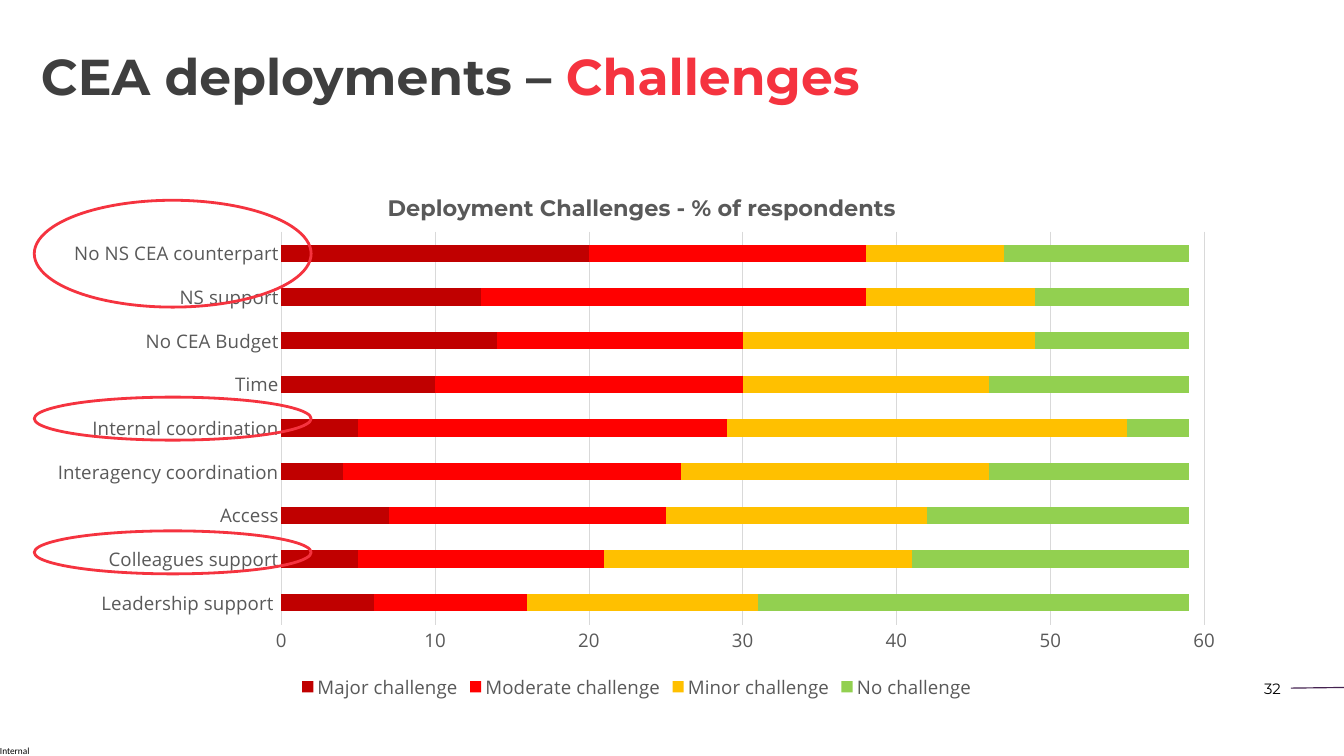
from lxml import etree
from pptx import Presentation
from pptx.chart.data import CategoryChartData
from pptx.dml.color import RGBColor
from pptx.enum.chart import XL_CHART_TYPE, XL_LEGEND_POSITION, XL_TICK_MARK
from pptx.enum.shapes import MSO_CONNECTOR, MSO_SHAPE
from pptx.enum.text import MSO_ANCHOR, MSO_AUTO_SIZE, PP_ALIGN
from pptx.oxml.ns import qn
from pptx.util import Inches, Pt

INK = {"dark": "3F3F3F", "red": "F5333F", "black": "000000", "gray": "595959",
       "grid": "D9D9D9", "plum": "452250"}
CATS = ["Leadership support ", "Colleagues support", "Access",
        "Interagency coordination", "Internal coordination", "Time",
        "No CEA Budget", "NS support", "No NS CEA counterpart"]
SERIES = {
    "Major challenge": ("C00000", [6, 5, 7, 4, 5, 10, 14, 13, 20]),
    "Moderate challenge": ("FF0000", [10, 16, 18, 22, 24, 20, 16, 25, 18]),
    "Minor challenge": ("FFC000", [15, 20, 17, 20, 26, 16, 19, 11, 9]),
    "No challenge": ("92D050", [28, 18, 17, 13, 4, 13, 10, 10, 12]),
}


def rgb(name):
    return RGBColor.from_string(INK.get(name, name))


def inches(box):
    return [Inches(n) for n in box]


def style(font, size, face, color, bold=False):
    font.size, font.name, font.bold = Pt(size), face, bold
    font.color.rgb = rgb(color)


def rule(line, color, width):
    line.color.rgb = rgb(color)
    line.width = Pt(width)


def add_title(slide, box):
    title = slide.shapes.title
    title.left, title.top, title.width, title.height = inches(box)
    frame = title.text_frame
    frame.auto_size = MSO_AUTO_SIZE.NONE
    frame.vertical_anchor = MSO_ANCHOR.MIDDLE
    para = frame.paragraphs[0]
    para.alignment = PP_ALIGN.LEFT
    para.line_spacing = 0.8
    style(para.font, 54, "Montserrat", "dark", True)
    para.add_run().text = "CEA deployments – "
    run = para.add_run()
    run.text = "Challenges"
    run.font.color.rgb = rgb("red")


def add_text(slide, box, text, size, face, align, pad):
    frame = slide.shapes.add_textbox(*inches(box)).text_frame
    frame.word_wrap = True
    frame.margin_left = frame.margin_right = Inches(2 * pad)
    frame.margin_top = frame.margin_bottom = Inches(pad)
    para = frame.paragraphs[0]
    para.text, para.alignment = text, align
    style(para.font, size, face, "black")


def place(node, index, **parts):
    """Give a chart part a manual layout, in shares of the chart area."""
    for old in node.findall(qn("c:layout")):
        node.remove(old)
    layout = etree.Element(qn("c:layout"))
    manual = etree.SubElement(layout, qn("c:manualLayout"))
    if "w" in parts:
        etree.SubElement(manual, qn("c:layoutTarget")).set("val", "inner")
    for key in ("x", "y"):
        etree.SubElement(manual, qn(f"c:{key}Mode")).set("val", "edge")
    for key, share in parts.items():
        etree.SubElement(manual, qn(f"c:{key}")).set("val", str(share))
    node.insert(index, layout)


def add_bars(slide, box):
    data = CategoryChartData()
    data.categories = CATS
    for name, (_, vals) in SERIES.items():
        data.add_series(name, vals)
    chart = slide.shapes.add_chart(
        XL_CHART_TYPE.BAR_STACKED, *inches(box), data).chart
    style(chart.font, 20, "Open Sans", "gray")

    chart.has_title = True
    para = chart.chart_title.text_frame.paragraphs[0]
    para.text = "Deployment Challenges - % of respondents"
    style(para.font, 24, "Montserrat", "gray", True)
    chart.chart_title.include_in_layout = False
    place(chart.chart_title._element, 1, x=0.29, y=0.04)
    area = chart._chartSpace.chart.plotArea
    place(area, 0, x=0.205, y=0.121, w=0.766, h=0.732)

    chart.has_legend = True
    chart.legend.position = XL_LEGEND_POSITION.BOTTOM
    chart.legend.include_in_layout = False
    style(chart.legend.font, 20, "Open Sans", "gray")

    plot = chart.plots[0]
    plot.gap_width, plot.overlap, plot.vary_by_categories = 150, 100, False
    for series, (color, _) in zip(plot.series, SERIES.values()):
        series.format.fill.solid()
        series.format.fill.fore_color.rgb = rgb(color)

    cat, val = chart.category_axis, chart.value_axis
    for axis in (cat, val):
        axis.major_tick_mark = axis.minor_tick_mark = XL_TICK_MARK.NONE
        style(axis.tick_labels.font, 20, "Open Sans", "gray")
    rule(cat.format.line, "grid", 0.75)
    val.format.line.fill.background()
    val.minimum_scale, val.maximum_scale, val.major_unit = 0, 60, 10
    val.has_major_gridlines = True
    rule(val.major_gridlines.format.line, "grid", 0.75)


def add_ring(slide, box):
    ring = slide.shapes.add_shape(MSO_SHAPE.OVAL, *inches(box))
    ring.shadow.inherit = False
    ring.fill.background()
    rule(ring.line, "red", 3)


def add_footer(slide):
    dash = slide.shapes.add_connector(
        MSO_CONNECTOR.STRAIGHT, *inches((19.21, 10.24, 20, 10.23)))
    rule(dash.line, "plum", 1.25)
    etree.SubElement(dash._element.spPr, qn("a:effectLst"))
    add_text(slide, (18.44, 10.06, 0.72, 0.37), "32", 16, "Montserrat",
             PP_ALIGN.RIGHT, 0.05)
    add_text(slide, (0, 11.09, 0.47, 0.17), "Internal", 10, "Calibri",
             PP_ALIGN.LEFT, 0)


def main():
    deck = Presentation()
    deck.slide_width, deck.slide_height = Inches(20), Inches(11.25)
    slide = deck.slides.add_slide(deck.slide_layouts[5])
    left = 0.51
    add_footer(slide)
    add_title(slide, (left, 0.79, 15.49, 0.83))
    add_bars(slide, (left, 2.48, 17.93, 7.99))
    for top, high in ((2.98, 1.59), (5.91, 0.64), (7.9, 0.64)):
        add_ring(slide, (left, top, 4.12, high))
    deck.save("out.pptx")


if __name__ == "__main__":
    main()
